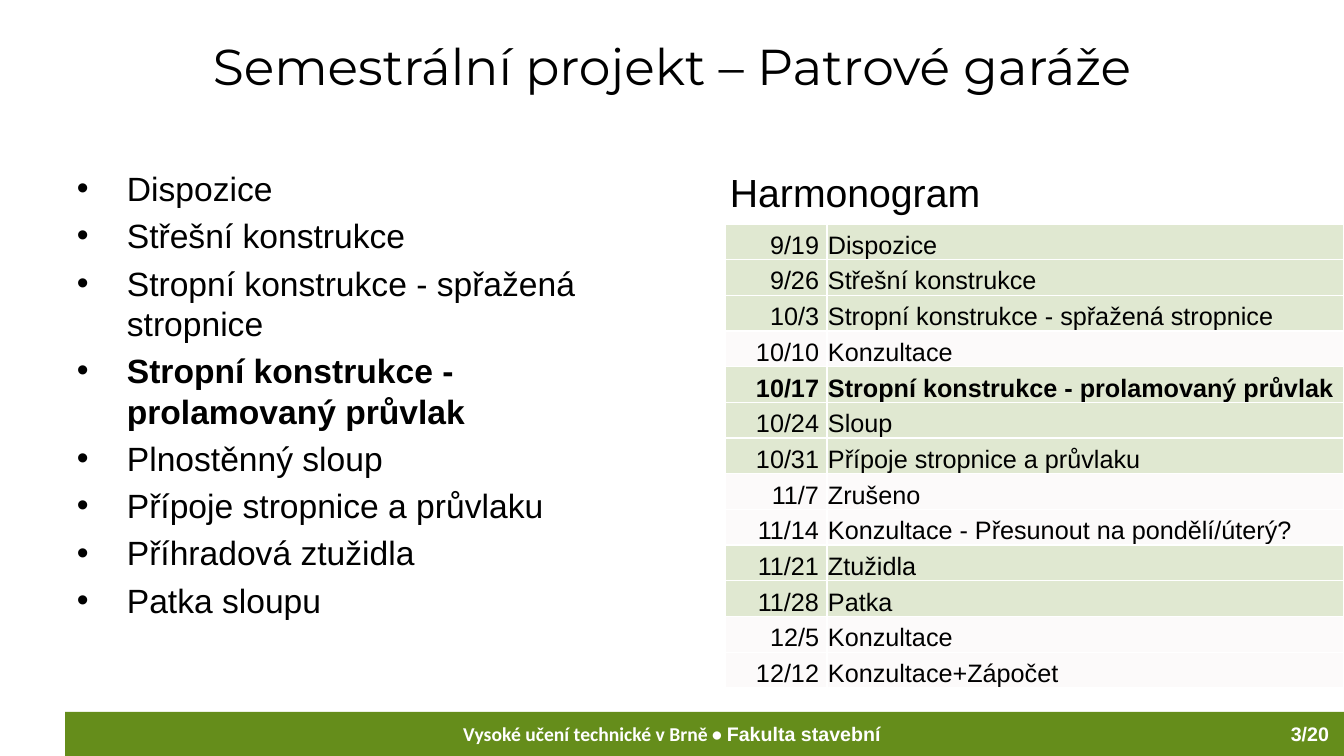
from lxml import etree
from pptx import Presentation
from pptx import util as u
from pptx.dml import color
from pptx.enum import shapes, text
from pptx.oxml import ns

EMU_PER_PX = 914400 / 100.8
COLORS = {"green": "658D1B", "pink": "F4E7E7", "white": "FFFFFF", "black": "000000"}
TOPICS = [
    "Dispozice",
    "Střešní konstrukce",
    "Stropní konstrukce - spřažená stropnice",
    "Stropní konstrukce - prolamovaný průvlak",
    "Plnostěnný sloup",
    "Přípoje stropnice a průvlaku",
    "Příhradová ztužidla",
    "Patka sloupu",
]
CURRENT_TOPIC = TOPICS[3]
# Date, programme and whether the week is a lesson
SCHEDULE = [
    ("9/19", "Dispozice", True),
    ("9/26", "Střešní konstrukce", True),
    ("10/3", "Stropní konstrukce - spřažená stropnice", True),
    ("10/10", "Konzultace", False),
    ("10/17", CURRENT_TOPIC, True),
    ("10/24", "Sloup", True),
    ("10/31", "Přípoje stropnice a průvlaku", True),
    ("11/7", "Zrušeno", False),
    ("11/14", "Konzultace - Přesunout na pondělí/úterý?", False),
    ("11/21", "Ztužidla", True),
    ("11/28", "Patka", True),
    ("12/5", "Konzultace", False),
    ("12/12", "Konzultace+Zápočet", False),
]
LEFT, CENTER, RIGHT = text.PP_ALIGN.LEFT, text.PP_ALIGN.CENTER, text.PP_ALIGN.RIGHT


def px(length):
    return u.Emu(round(length * EMU_PER_PX))


def rgb(name):
    return color.RGBColor.from_string(COLORS[name])


def style_font(font, size, name="Arial", color_name="black", bold=False):
    font.size = u.Pt(size)
    font.name = name
    font.bold = bold
    font.color.rgb = rgb(color_name)


def add_text_frame(slide, left, top, width, height):
    box = slide.shapes.add_textbox(px(left), px(top), px(width), px(height))
    box.text_frame.word_wrap = True
    return box.text_frame


def add_line(slide, left, top, width, height, content, size, alignment=LEFT, **font_style):
    paragraph = add_text_frame(slide, left, top, width, height).paragraphs[0]
    paragraph.text = content
    paragraph.alignment = alignment
    style_font(paragraph.font, size, **font_style)


def add_bullet(paragraph, indent):
    properties = paragraph._p.get_or_add_pPr()
    properties.set("marL", str(px(indent)))
    properties.set("indent", str(-px(indent)))
    etree.SubElement(properties, ns.qn("a:buFont"), typeface="Arial")
    etree.SubElement(properties, ns.qn("a:buChar"), char="•")


def add_topics(slide):
    frame = add_text_frame(slide, 67, 163, 597, 512)
    for index, topic in enumerate(TOPICS):
        paragraph = frame.add_paragraph() if index else frame.paragraphs[0]
        paragraph.text = topic
        add_bullet(paragraph, 50)
        if index:
            paragraph.space_before = u.Pt(5)
        style_font(paragraph.font, 24, bold=topic == CURRENT_TOPIC)


def style_cell(cell, fill_name):
    properties = cell._tc.get_or_add_tcPr()
    # White borders come before the fill
    for side in ("lnL", "lnR", "lnT", "lnB"):
        border = etree.SubElement(properties, ns.qn(f"a:{side}"), w=str(u.Pt(1)))
        line_fill = etree.SubElement(border, ns.qn("a:solidFill"))
        etree.SubElement(line_fill, ns.qn("a:srgbClr"), val=COLORS["white"])
    cell.fill.solid()
    cell.fill.fore_color.rgb = rgb(fill_name)
    fill_color = properties.find(ns.qn("a:solidFill")).find(ns.qn("a:srgbClr"))
    etree.SubElement(fill_color, ns.qn("a:alpha"), val="20000")
    cell.vertical_anchor = text.MSO_ANCHOR.BOTTOM
    cell.margin_left = cell.margin_right = cell.margin_top = px(1)
    cell.margin_bottom = 0


def add_schedule(slide):
    frame = slide.shapes.add_table(len(SCHEDULE), 2, px(725), px(224), px(619), px(464))
    table = frame.table
    table.first_row = table.horz_banding = False
    for column, width in zip(table.columns, (102, 517)):
        column.width = px(width)
    for row, (date, programme, is_lesson) in zip(table.rows, SCHEDULE):
        for cell, content, alignment in zip(row.cells, (f"{date} ", programme), (RIGHT, LEFT)):
            style_cell(cell, "green" if is_lesson else "pink")
            paragraph = cell.text_frame.paragraphs[0]
            paragraph.text = content
            paragraph.alignment = alignment
            style_font(paragraph.font, 18, bold=programme == CURRENT_TOPIC)


def add_footer(slide):
    bar = slide.shapes.add_shape(
        shapes.MSO_SHAPE.RECTANGLE, px(65), px(712), px(1279), px(44))
    bar.shadow.inherit = False
    bar.fill.solid()
    bar.fill.fore_color.rgb = rgb("green")
    bar.line.fill.background()

    # School and faculty use different fonts
    paragraph = add_text_frame(slide, 0, 717, 1344, 34).paragraphs[0]
    paragraph.alignment = CENTER
    for content, name in (("Vysoké učení technické v Brně • ", "Calibri"),
                          ("Fakulta stavební", "Arial")):
        run = paragraph.add_run()
        run.text = content
        style_font(run.font, 14, name, "white", True)

    add_line(slide, 1207, 717, 132, 34, "3/20", 14, RIGHT, color_name="white", bold=True)


def main():
    presentation = Presentation()
    presentation.slide_width, presentation.slide_height = px(1344), px(756)
    slide = presentation.slides.add_slide(presentation.slide_layouts[6])

    add_footer(slide)
    # Title
    add_line(slide, 67, 30, 1210, 110, "Semestrální projekt – Patrové garáže", 36,
             CENTER, name="Montserrat")
    add_topics(slide)
    # Schedule with its heading
    add_line(slide, 720, 163, 597, 512, "Harmonogram", 28)
    add_schedule(slide)

    presentation.save("out.pptx")


if __name__ == "__main__":
    main()
